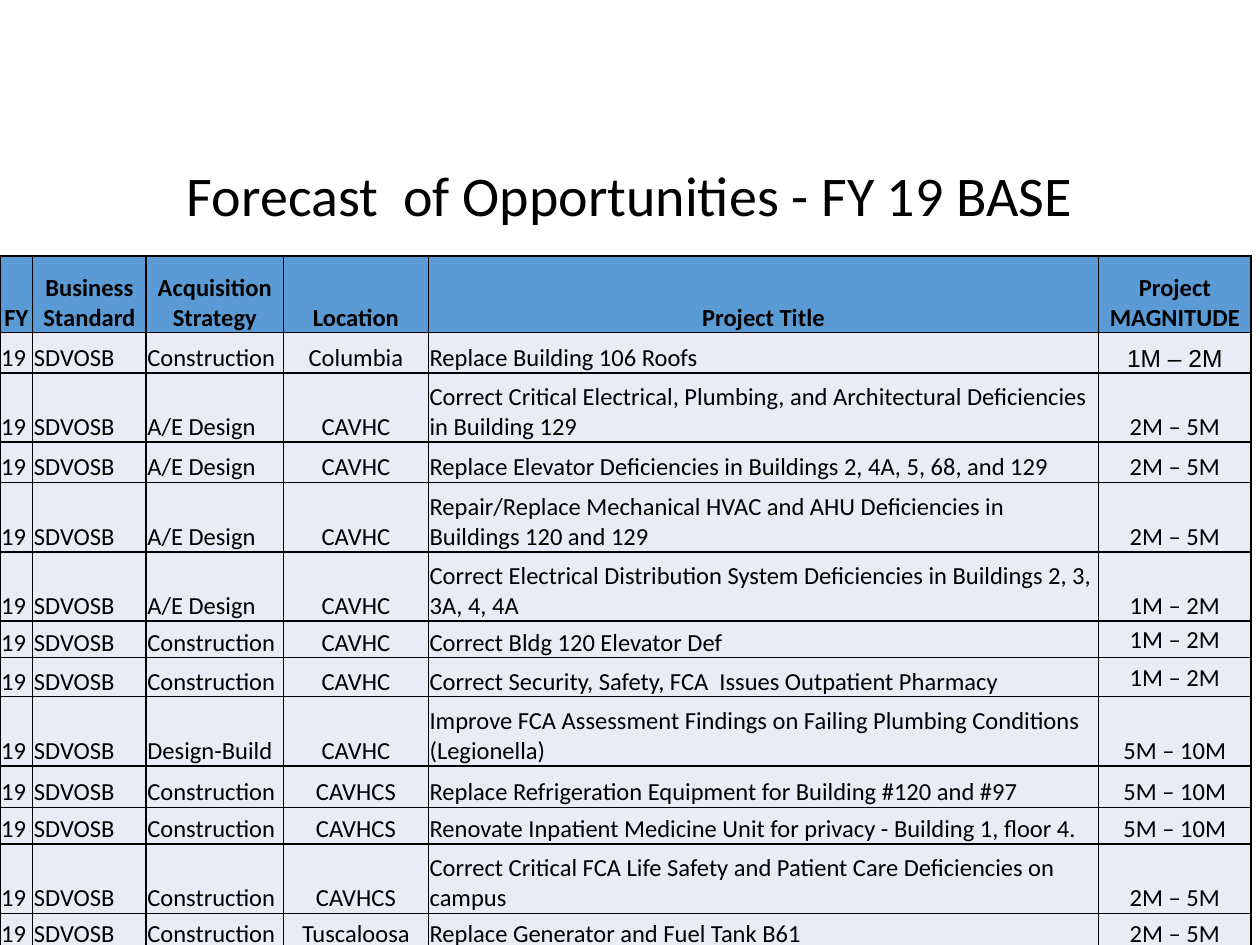
import pptx
import pptx.dml.color
import pptx.enum.text
import pptx.oxml
import pptx.oxml.ns
import pptx.util

RGBColor = pptx.dml.color.RGBColor
ALIGN = pptx.enum.text.PP_ALIGN
ANCHOR = pptx.enum.text.MSO_ANCHOR

BLACK = RGBColor(0x00, 0x00, 0x00)
HEADER_BLUE = RGBColor(0x5B, 0x9B, 0xD5)
ROW_TINT = RGBColor(0xE9, 0xEB, 0xF5)

GRID_COLS, GRID_ROWS = 1000, 750
COL_WIDTHS = [26, 90, 109, 115, 532, 121]
ROW_HEIGHTS = [61, 32, 55, 32, 55, 55, 29, 31, 55, 33, 29, 55, 28]
CENTERED_COLS = {3, 5}
MAGNITUDE_COL = 5
MIDDLE_ROWS = {6, 7}
ARIAL_ROW = 1

HEADERS = ["FY", "Business Standard", "Acquisition Strategy", "Location",
           "Project Title", "Project MAGNITUDE"]
PROJECTS = [
    ("Construction", "Columbia", "Replace Building 106 Roofs", "1M – 2M"),
    ("A/E Design", "CAVHC", "Correct Critical Electrical, Plumbing, and "
     "Architectural Deficiencies in Building 129", "2M – 5M"),
    ("A/E Design", "CAVHC", "Replace Elevator Deficiencies in Buildings "
     "2, 4A, 5, 68, and 129", "2M – 5M"),
    ("A/E Design", "CAVHC", "Repair/Replace Mechanical HVAC and AHU "
     "Deficiencies in Buildings 120 and 129", "2M – 5M"),
    ("A/E Design", "CAVHC", "Correct Electrical Distribution System "
     "Deficiencies in Buildings 2, 3, 3A, 4, 4A", "1M – 2M"),
    ("Construction", "CAVHC", "Correct Bldg 120 Elevator Def", "1M – 2M"),
    ("Construction", "CAVHC", "Correct Security, Safety, FCA  Issues "
     "Outpatient Pharmacy", "1M – 2M"),
    ("Design-Build", "CAVHC", "Improve FCA Assessment Findings on Failing "
     "Plumbing Conditions (Legionella)", "5M – 10M"),
    ("Construction", "CAVHCS", "Replace Refrigeration Equipment for "
     "Building #120 and #97", "5M – 10M"),
    ("Construction", "CAVHCS", "Renovate Inpatient Medicine Unit for "
     "privacy - Building 1, floor 4.", "5M – 10M"),
    ("Construction", "CAVHCS", "Correct Critical FCA Life Safety and "
     "Patient Care Deficiencies on campus", "2M – 5M"),
    ("Construction", "Tuscaloosa", "Replace Generator and Fuel Tank B61",
     "2M – 5M"),
]


class ForecastSlide:
    """Hold the grid, text style and current slide."""

    font = "Calibri"
    title_size = 32
    table_size = 14

    def __init__(self, prs):
        self.s = prs.slides.add_slide(prs.slide_layouts[6])
        self.col = prs.slide_width / GRID_COLS
        self.row = prs.slide_height / GRID_ROWS

    def place(self, x, y, w, h):
        return [int(x * self.col), int(y * self.row),
                int(w * self.col), int(h * self.row)]

    def set_text(self, tf, text, size, align, bold=False, font=None):
        tf.word_wrap = True
        p = tf.paragraphs[0]
        p.text = text
        p.alignment = align
        p.font.name = font or self.font
        p.font.size = pptx.util.Pt(size)
        p.font.bold = bold
        p.font.color.rgb = BLACK

    def title(self, text, x, y, w, h):
        tf = self.s.shapes.add_textbox(*self.place(x, y, w, h)).text_frame
        tf.vertical_anchor = ANCHOR.MIDDLE
        self.set_text(tf, text, self.title_size, ALIGN.CENTER)

    def border(self, cell):
        tc_pr = cell._tc.get_or_add_tcPr()
        for side in ("lnL", "lnR", "lnT", "lnB"):
            tc_pr.append(pptx.oxml.parse_xml(
                f'<a:{side} {pptx.oxml.ns.nsdecls("a")} w="12700">'
                f'<a:solidFill><a:srgbClr val="{BLACK}"/></a:solidFill>'
                f'</a:{side}>'))

    def cell(self, cell, text, i, j):
        header = i == 0
        magnitude = j == MAGNITUDE_COL
        inset = pptx.util.Inches(0.01)
        cell.margin_left = cell.margin_right = cell.margin_top = inset
        cell.margin_bottom = 0
        middle = magnitude and i in MIDDLE_ROWS
        cell.vertical_anchor = ANCHOR.MIDDLE if middle else ANCHOR.BOTTOM
        centered = header or j in CENTERED_COLS
        self.set_text(cell.text_frame, text, self.table_size,
                      ALIGN.CENTER if centered else ALIGN.LEFT, header,
                      "Arial" if magnitude and i == ARIAL_ROW else None)
        self.border(cell)
        cell.fill.solid()
        cell.fill.fore_color.rgb = HEADER_BLUE if header else ROW_TINT

    def table(self, rows, x, y):
        frame = self.s.shapes.add_table(
            len(rows), len(COL_WIDTHS),
            *self.place(x, y, sum(COL_WIDTHS), sum(ROW_HEIGHTS)))
        table = frame.table
        for column, width in zip(table.columns, COL_WIDTHS):
            column.width = int(width * self.col)
        for row, height in zip(table.rows, ROW_HEIGHTS):
            row.height = int(height * self.row)
        for i, values in enumerate(rows):
            for j, text in enumerate(values):
                self.cell(table.cell(i, j), text, i, j)


def main():
    prs = pptx.Presentation()
    prs.slide_width = pptx.util.Inches(10)
    prs.slide_height = pptx.util.Inches(7.5)
    slide = ForecastSlide(prs)
    slide.title("Forecast  of Opportunities - FY 19 BASE", 0, 125, 1000, 58)
    slide.table([HEADERS] + [("19", "SDVOSB", *p) for p in PROJECTS], 0, 203)
    prs.save("out.pptx")


if __name__ == "__main__":
    main()
